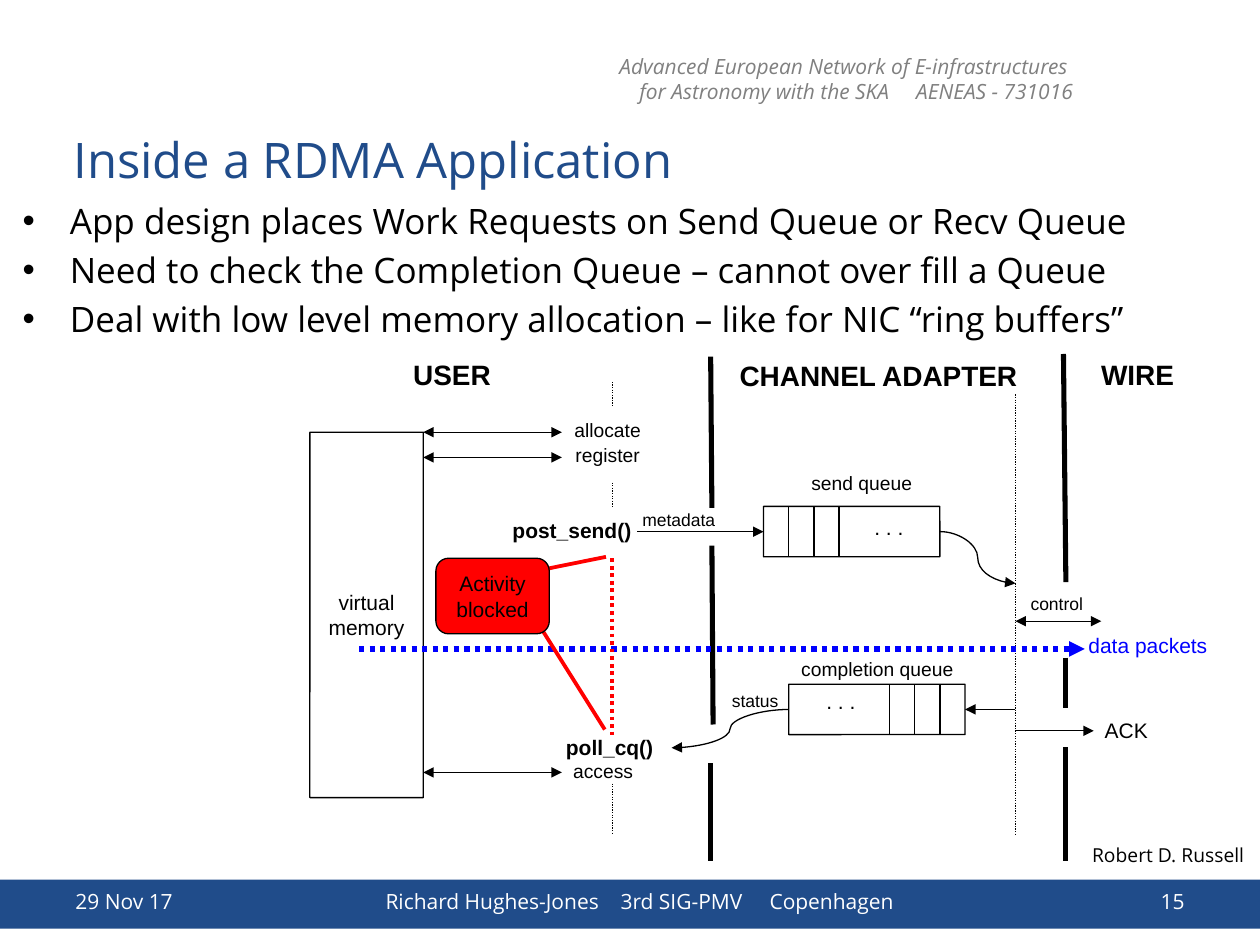
from lxml.etree import SubElement
from pptx import Presentation
from pptx.dml.color import RGBColor
from pptx.enum.dml import MSO_LINE
from pptx.enum.shapes import MSO_CONNECTOR as LINK, MSO_SHAPE as SHAPE
from pptx.enum.text import MSO_ANCHOR as ANCHOR, PP_ALIGN as ALIGN
from pptx.oxml.ns import qn
from pptx.util import Pt

BLACK = RGBColor(0x00, 0x00, 0x00)
WHITE = RGBColor(0xFF, 0xFF, 0xFF)
GREY = RGBColor(0x80, 0x80, 0x80)
NAVY = RGBColor(0x20, 0x4C, 0x8A)
RED = RGBColor(0xFF, 0x00, 0x00)
BLUE = RGBColor(0x00, 0x00, 0xFF)
SANS, ARIAL = "Open Sans", "Arial"
THIN, RED_WIDTH, BAR_WIDTH = 0.75, 2.15, 2.89

# Content
HEADER = ["Advanced European Network of E-infrastructures ",
          "for Astronomy with the SKA     AENEAS - 731016"]
TITLE = "Inside a RDMA Application"
BULLETS = [
    "App design places Work Requests on Send Queue or Recv Queue",
    "Need to check the Completion Queue – cannot over fill a Queue",
    "Deal with low level memory allocation – like for NIC “ring buffers”",
]
FOOTER = [  # text, left, width, alignment
    ("29 Nov 17", 36, 97.2, ALIGN.LEFT),
    ("Richard Hughes-Jones    3rd SIG-PMV     Copenhagen", 133.2, 465.1, ALIGN.CENTER),
    ("15", 598.3, 85.7, ALIGN.RIGHT),
]
HEADINGS = [("USER", 227.5, 199.4, 66), ("CHANNEL ADAPTER", 414, 199.7, 182),
            ("WIRE", 620.6, 199.4, 64)]
LABELS = [  # text, left, top, width, size, bold, colour
    ("allocate", 321.1, 235.4, 57, 11, False, BLACK),
    ("register", 321.8, 249.8, 56, 11, False, BLACK),
    ("access", 320.4, 430.6, 53, 11, False, BLACK),
    ("send queue", 456.5, 265.7, 76, 11, False, BLACK),
    ("completion queue", 450.7, 372.2, 106, 11, False, BLACK),
    ("metadata", 360, 287.3, 61, 10, False, BLACK),
    ("control", 581.8, 335.5, 49, 10, False, BLACK),
    ("status", 411.1, 391, 46, 10, False, BLACK),
    ("post_send()", 285.8, 292.3, 88, 12, True, BLACK),
    ("poll_cq()", 316.3, 416.2, 70, 12, True, BLACK),
    ("data packets", 614.9, 357.8, 88, 12, False, BLUE),
    ("ACK", 624.2, 406.4, 44, 12, False, BLACK),
    (". . .", 492.5, 290.2, 37.4, 12, False, BLACK),
    (". . .", 465.1, 390.2, 36, 12, False, BLACK),
]

# Diagram geometry
CELL, QUEUE_WIDTH, QUEUE_HEIGHT = 14.4, 100.8, 28.8
SEND_LEFT, SEND_TOP = 436.3, 289.4
DONE_LEFT, DONE_TOP = 450.7, 391
MEMORY_LEFT, MEMORY_TOP, MEMORY_WIDTH, MEMORY_HEIGHT = 177.1, 247, 64.8, 208.8
MEMORY_RIGHT = MEMORY_LEFT + MEMORY_WIDTH
USER_X, ADAPTER_X = 349.9, 580.3
MEMORY_CALLS = [247, 261.4, 441.4]
USER_GAPS = [(218.2, 231.8), (275.8, 290.2), (447.8, 476.6)]
BARS = [(406.1, 203.8, 406.8, 290.2), (406.8, 311.8, 407.5, 414),
        (406.1, 436.3, 406.1, 491.8), (607.7, 202.3, 609.1, 332.6),
        (609.1, 375.8, 609.1, 404.6), (609.1, 427, 609.1, 491.8)]
RED_LINES = [(306.7, 355, 345.6, 416.9), (306.7, 326.2, 346.3, 318.2)]

deck = Presentation()
deck.slide_width, deck.slide_height = Pt(720), Pt(540)
page = deck.slides.add_slide(deck.slide_layouts[6])


def write(box, lines, size, font=ARIAL, color=BLACK, align=ALIGN.LEFT, bold=False,
          italic=False, anchor=ANCHOR.TOP, wrap=True):
    frame = box.text_frame
    frame.word_wrap, frame.vertical_anchor = wrap, anchor
    for index, line in enumerate(lines):
        para = frame.paragraphs[0] if index == 0 else frame.add_paragraph()
        para.alignment = align
        span = para.add_run()
        span.text = line
        face = span.font
        face.name, face.size, face.bold, face.italic = font, Pt(size), bold, italic
        face.color.rgb = color
    return frame


def add_text(left, top, width, height, lines, size, **style):
    box = page.shapes.add_textbox(Pt(left), Pt(top), Pt(width), Pt(height))
    return write(box, lines, size, **style)


def add_block(kind, left, top, width, height, fill=None, outline=BLACK, corner=None):
    block = page.shapes.add_shape(kind, Pt(left), Pt(top), Pt(width), Pt(height))
    block.shadow.inherit = False
    if corner is not None:
        block.adjustments[0] = corner
    if fill is None:
        block.fill.background()
    else:
        block.fill.solid()
        block.fill.fore_color.rgb = fill
    if outline is None:
        block.line.fill.background()
    else:
        block.line.color.rgb = outline
        block.line.width = Pt(THIN)
    return block


def add_line(x1, y1, x2, y2, color=BLACK, width=THIN, dotted=False, arrows=(),
             kind=LINK.STRAIGHT):
    line = page.shapes.add_connector(kind, Pt(x1), Pt(y1), Pt(x2), Pt(y2))
    line.line.color.rgb = color
    line.line.width = Pt(width)
    if dotted:
        line.line.dash_style = MSO_LINE.ROUND_DOT
    for end in arrows:
        SubElement(line.line._get_or_add_ln(), qn("a:" + end), type="triangle")
    SubElement(line._element.spPr, qn("a:effectLst"))
    return line


def add_queue(left, top, first_divider):
    queue = add_block(SHAPE.ROUNDED_RECTANGLE, left, top, QUEUE_WIDTH, QUEUE_HEIGHT,
                      corner=0.004)
    for index in range(3):
        x = first_divider + index * CELL
        add_line(x, top, x, top + QUEUE_HEIGHT)
    return queue


BOTH, END = ("headEnd", "tailEnd"), ("tailEnd",)

# Header, title and bullets
add_text(314.6, 27, 306, 36, HEADER, 12, font=SANS, color=GREY, align=ALIGN.RIGHT,
         italic=True)
add_text(35, 64.4, 648, 52.6, [TITLE], 28, font=SANS, color=NAVY, anchor=ANCHOR.MIDDLE)
body = add_text(5.8, 110.4, 685.4, 92, BULLETS, 20, font=SANS)
for index, para in enumerate(body.paragraphs):
    properties = para._p.get_or_add_pPr()
    properties.set("marL", str(Pt(27)))
    properties.set("indent", str(Pt(-27)))
    SubElement(properties, qn("a:buFont"), typeface=ARIAL)
    SubElement(properties, qn("a:buChar"), char="•")
    if index:
        para.space_before = Pt(4)

# Footer
add_block(SHAPE.RECTANGLE, 0, 502.6, 720, 28.1, fill=NAVY, outline=None)
for text, left, width, align in FOOTER:
    add_text(left, 500.4, width, 28.8, [text], 12, font=SANS, color=WHITE, align=align,
             anchor=ANCHOR.MIDDLE)

# Boundaries and time lines
for bar in BARS:
    add_line(*bar, width=BAR_WIDTH)
for top, bottom in USER_GAPS:
    add_line(USER_X, top, USER_X, bottom, dotted=True)
for top, bottom in [(225.4, 333.4), (333.4, 477.4)]:
    add_line(ADAPTER_X, top, ADAPTER_X, bottom, dotted=True)

# Virtual memory and its calls
memory = add_block(SHAPE.ROUNDED_RECTANGLE, MEMORY_LEFT, MEMORY_TOP, MEMORY_WIDTH,
                   MEMORY_HEIGHT, corner=0.002)
write(memory, ["virtual", "memory"], 12, align=ALIGN.CENTER, anchor=ANCHOR.MIDDLE)
for y in MEMORY_CALLS:
    add_line(MEMORY_RIGHT, y, 321.1, y, arrows=BOTH)

# Queues with their links
send_queue = add_queue(SEND_LEFT, SEND_TOP, SEND_LEFT + CELL)
done_queue = add_queue(DONE_LEFT, DONE_TOP, DONE_LEFT + QUEUE_WIDTH - 3 * CELL)
send_y, done_y = SEND_TOP + QUEUE_HEIGHT / 2, DONE_TOP + QUEUE_HEIGHT / 2
add_line(364.3, send_y, SEND_LEFT, send_y, arrows=END).end_connect(send_queue, 1)
add_line(SEND_LEFT + QUEUE_WIDTH, send_y, ADAPTER_X, 333.4, arrows=END,
         kind=LINK.CURVE).begin_connect(send_queue, 3)
add_line(ADAPTER_X, done_y, DONE_LEFT + QUEUE_WIDTH, done_y,
         arrows=END).end_connect(done_queue, 3)
add_line(DONE_LEFT, done_y, 383.8, 427.3, arrows=END,
         kind=LINK.CURVE).begin_connect(done_queue, 1)

# Traffic on the wire
add_line(ADAPTER_X, 355, 629.3, 355, arrows=BOTH)
add_line(ADAPTER_X, 417.6, 625, 417.6, arrows=END)
add_line(205.2, 370.8, 619.9, 370.8, color=BLUE, width=3, dotted=True, arrows=END)

# Blocked activity
for red_line in RED_LINES:
    add_line(*red_line, color=RED, width=RED_WIDTH)
add_line(USER_X, 319, USER_X, 419.8, color=RED, width=RED_WIDTH, dotted=True)
blocked = add_block(SHAPE.ROUNDED_RECTANGLE, 249.1, 319, 64.8, 43.2, fill=RED, corner=0.168)
write(blocked, ["Activity", "blocked"], 12, align=ALIGN.CENTER, anchor=ANCHOR.MIDDLE)

# Labels
for text, left, top, width in HEADINGS:
    frame = add_text(left, top, width, 28, [text], 16, bold=True, wrap=False)
    frame.margin_left = frame.margin_right = Pt(8.64)
    frame.margin_top = frame.margin_bottom = Pt(5)
for text, left, top, width, size, bold, color in LABELS:
    add_text(left, top, width, 20, [text], size, bold=bold, color=color, wrap=False)
add_text(617, 478.1, 102.5, 21, ["Robert D. Russell"], 11, font=SANS, wrap=False)

deck.save("out.pptx")
